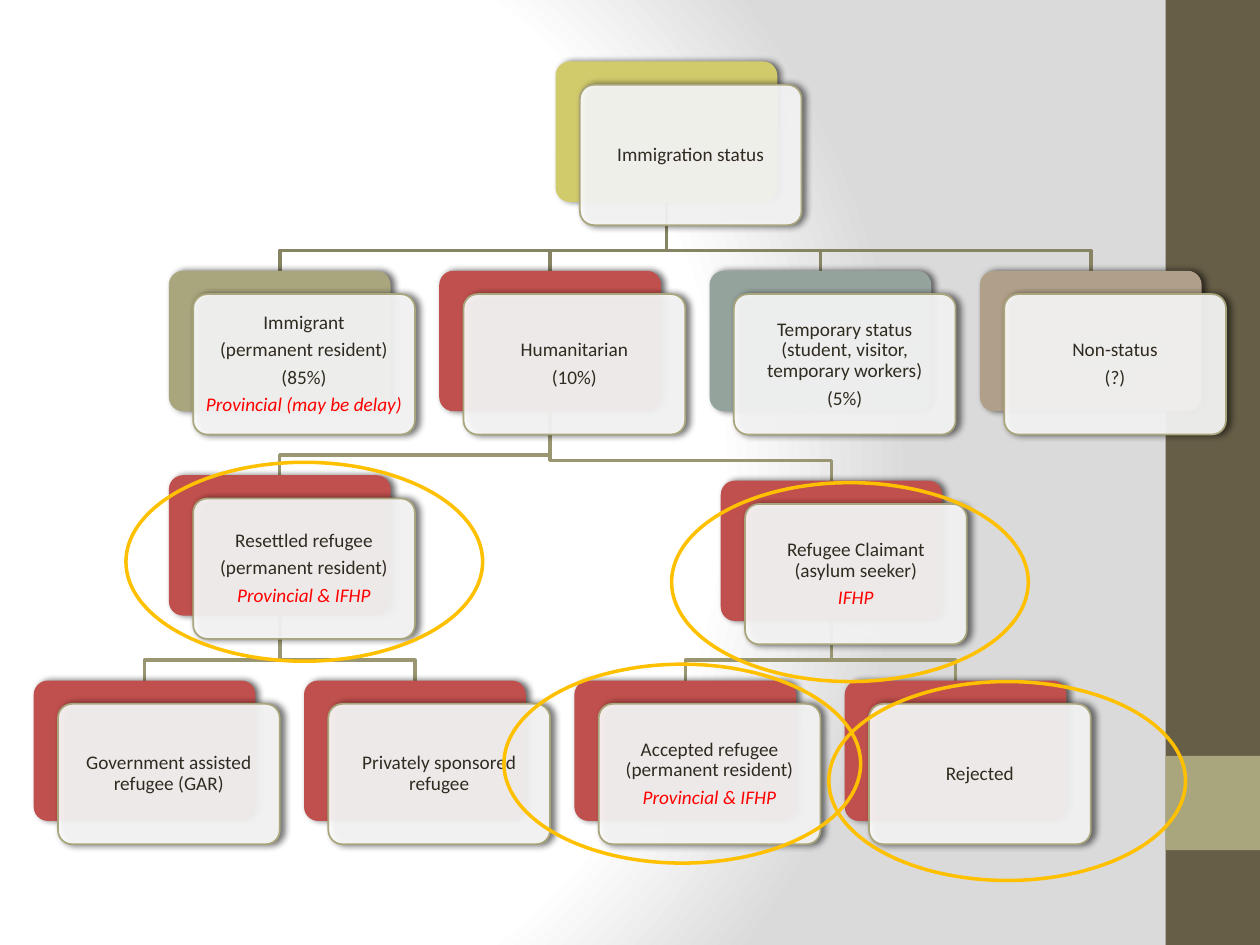
from dataclasses import dataclass

from pptx import Presentation, oxml, util as u
from pptx.dml import color
from pptx.enum import shapes, text
from pptx.oxml import ns

COLORS = {
    "sidebar": "675E47", "olive": "A9A57C", "lime": "D2CB6C", "red": "C0504D",
    "sage": "95A39D", "tan": "B1A089", "white": "FFFFFF", "gray": "DADADA",
    "ink": "2F2B20", "accent": "FF0000", "ring": "FFC000", "shadow": "000000",
    "upper_branch": "878463", "lower_branch": "999671",
}
CARD_WIDTH, CARD_HEIGHT = 4.47, 2.83
FRONT_X, FRONT_Y = 0.49, 0.47
COLUMN_START, COLUMN_PITCH = 0.68, 5.45
BRANCH_DROP = 0.41
RING_WIDTH, RING_HEIGHT = 7.19, 4.01
ROWS = (1.24, 5.46, 9.58, 13.72)
FRAME_FORMAT = {
    "word_wrap": True, "vertical_anchor": text.MSO_ANCHOR.MIDDLE,
    "margin_left": u.Cm(0.12), "margin_right": u.Cm(0.12),
    "margin_top": u.Cm(0.12), "margin_bottom": u.Cm(0.12),
}
PARAGRAPH_FORMAT = {
    "alignment": text.PP_ALIGN.CENTER, "line_spacing": 0.9,
    "space_before": u.Pt(0), "space_after": u.Pt(3.85),
}
FONT_FORMAT = {"name": "Calibri", "size": u.Pt(11)}


@dataclass
class Card:
    """A status in the tree, with its place in centimetres."""
    key: str
    parent: str
    left: float
    top: float
    fill: str
    lines: tuple
    coverage: str = ""

    @property
    def center(self) -> float:
        """Return the horizontal middle of the back card."""
        return self.left + CARD_WIDTH / 2


def column(index: float) -> float:
    """Return the left edge of a column of the tree."""
    return COLUMN_START + COLUMN_PITCH * index


CARDS = (
    Card("root", "", 11.2, ROWS[0], "lime", ("Immigration status",)),
    Card("immigrant", "root", column(0.5), ROWS[1], "olive",
         ("Immigrant", "(permanent resident)", "(85%)"), "Provincial (may be delay)"),
    Card("humanitarian", "root", column(1.5), ROWS[1], "red", ("Humanitarian", "(10%)")),
    Card("resettled", "humanitarian", column(0.5), ROWS[2], "red",
         ("Resettled refugee", "(permanent resident)"), "Provincial & IFHP"),
    Card("government", "resettled", column(0), ROWS[3], "red",
         ("Government assisted refugee (GAR)",)),
    Card("private", "resettled", column(1), ROWS[3], "red", ("Privately sponsored refugee",)),
    Card("claimant", "humanitarian", 14.53, 9.69, "red",
         ("Refugee Claimant (asylum seeker)",), "IFHP"),
    Card("accepted", "claimant", column(2), ROWS[3], "red",
         ("Accepted refugee (permanent resident)",), "Provincial & IFHP"),
    Card("rejected", "claimant", column(3), ROWS[3], "red", ("Rejected",)),
    Card("temporary", "root", column(2.5), ROWS[1], "sage",
         ("Temporary status (student, visitor, temporary workers)", "(5%)")),
    Card("non_status", "root", column(3.5), ROWS[1], "tan", ("Non-status", "(?)")),
)
RINGS = ((2.54, 9.32), (13.54, 9.73), (10.16, 13.39), (16.71, 13.74))


def rgb(name: str) -> color.RGBColor:
    """Return a named colour."""
    return color.RGBColor.from_string(COLORS[name])


def apply_format(target, values: dict) -> None:
    """Set each format value on the target."""
    for name, value in values.items():
        setattr(target, name, value)


def style_shape(shape, fill: str = "", line: str = "", weight: float = 1) -> None:
    """Set the fill and line of a shape and clear its shadow."""
    shape.shadow.inherit = False
    if fill:
        shape.fill.solid()
        shape.fill.fore_color.rgb = rgb(fill)
    else:
        shape.fill.background()
    if line:
        shape.line.color.rgb = rgb(line)
        shape.line.width = u.Pt(weight)
    else:
        shape.line.fill.background()


def add_shape(slide, kind, left: float, top: float, width: float, height: float, **style):
    """Add a styled preset shape."""
    shape = slide.shapes.add_shape(kind, u.Cm(left), u.Cm(top), u.Cm(width), u.Cm(height))
    style_shape(shape, **style)
    return shape


def add_panel(slide, left: float, top: float, **style):
    """Add a rounded panel with a soft shadow to its right."""
    shape = add_shape(slide, shapes.MSO_SHAPE.ROUNDED_RECTANGLE, left, top,
                      CARD_WIDTH, CARD_HEIGHT, **style)
    shape.adjustments[0] = 0.1
    shape.element.spPr.find(ns.qn("a:effectLst")).append(oxml.parse_xml(
        f'<a:outerShdw {ns.nsdecls("a")} blurRad="{u.Pt(4)}" dist="{u.Pt(2)}" dir="0" '
        f'rotWithShape="0"><a:srgbClr val="{COLORS["shadow"]}"><a:alpha val="60000"/>'
        '</a:srgbClr></a:outerShdw>'))
    return shape


def add_card(slide, card: Card) -> None:
    """Add a coloured back panel and a translucent front panel with text."""
    add_panel(slide, card.left, card.top, fill=card.fill)
    front = add_panel(slide, card.left + FRONT_X, card.top + FRONT_Y,
                      fill="white", line="olive")
    fill_color = front.element.spPr.find(ns.qn("a:solidFill"))[0]
    fill_color.append(oxml.parse_xml(f'<a:alpha {ns.nsdecls("a")} val="90000"/>'))
    frame = front.text_frame
    apply_format(frame, FRAME_FORMAT)
    lines = [(line, "ink") for line in card.lines]
    if card.coverage:
        lines.append((card.coverage, "accent"))
    for index, (wording, ink) in enumerate(lines):
        paragraph = frame.add_paragraph() if index else frame.paragraphs[0]
        apply_format(paragraph, PARAGRAPH_FORMAT)
        run = paragraph.add_run()
        run.text = wording
        apply_format(run.font, {**FONT_FORMAT, "italic": ink == "accent"})
        run.font.color.rgb = rgb(ink)


def add_branch(slide, parent: Card, child: Card) -> None:
    """Add an elbow line from a parent card to a child card."""
    bend = child.top - BRANCH_DROP
    corners = ((parent.center, parent.top + CARD_HEIGHT), (parent.center, bend),
               (child.center, bend), (child.center, child.top))
    points = [(u.Cm(x), u.Cm(y)) for x, y in corners]
    builder = slide.shapes.build_freeform(*points[0])
    builder.add_line_segments(points[1:], close=False)
    line = "lower_branch" if parent.parent else "upper_branch"
    style_shape(builder.convert_to_shape(), line=line, weight=2)


def set_background(slide) -> None:
    """Give the slide a circular gradient background."""
    slide.background.fill.solid()
    solid = slide.element.find(".//" + ns.qn("p:bgPr")).find(ns.qn("a:solidFill"))
    stops = "".join(
        f'<a:gs pos="{position}000"><a:srgbClr val="{COLORS[name]}"/></a:gs>'
        for position, name in ((0, "white"), (75, "white"), (100, "gray")))
    solid.getparent().replace(solid, oxml.parse_xml(
        f'<a:gradFill {ns.nsdecls("a")} rotWithShape="1"><a:gsLst>{stops}</a:gsLst>'
        '<a:path path="circle"><a:fillToRect l="20000" t="50000" r="100000" b="50000"/>'
        '</a:path></a:gradFill>'))


def main() -> None:
    """Build the immigration status slide."""
    presentation = Presentation()
    presentation.slide_width, presentation.slide_height = u.Cm(25.4), u.Cm(19.05)
    slide = presentation.slides.add_slide(presentation.slide_layouts[6])
    set_background(slide)
    rectangle = shapes.MSO_SHAPE.RECTANGLE
    add_shape(slide, rectangle, 23.5, 0, 1.9, 19.05, fill="sidebar")
    add_shape(slide, rectangle, 23.5, 15.24, 1.9, 1.9, fill="olive")
    by_key = {card.key: card for card in CARDS}
    for card in CARDS:
        if card.parent:
            add_branch(slide, by_key[card.parent], card)
    for card in CARDS:
        add_card(slide, card)
    for left, top in RINGS:
        add_shape(slide, shapes.MSO_SHAPE.OVAL, left, top, RING_WIDTH, RING_HEIGHT,
                  line="ring", weight=2)
    presentation.save("out.pptx")


if __name__ == "__main__":
    main()
